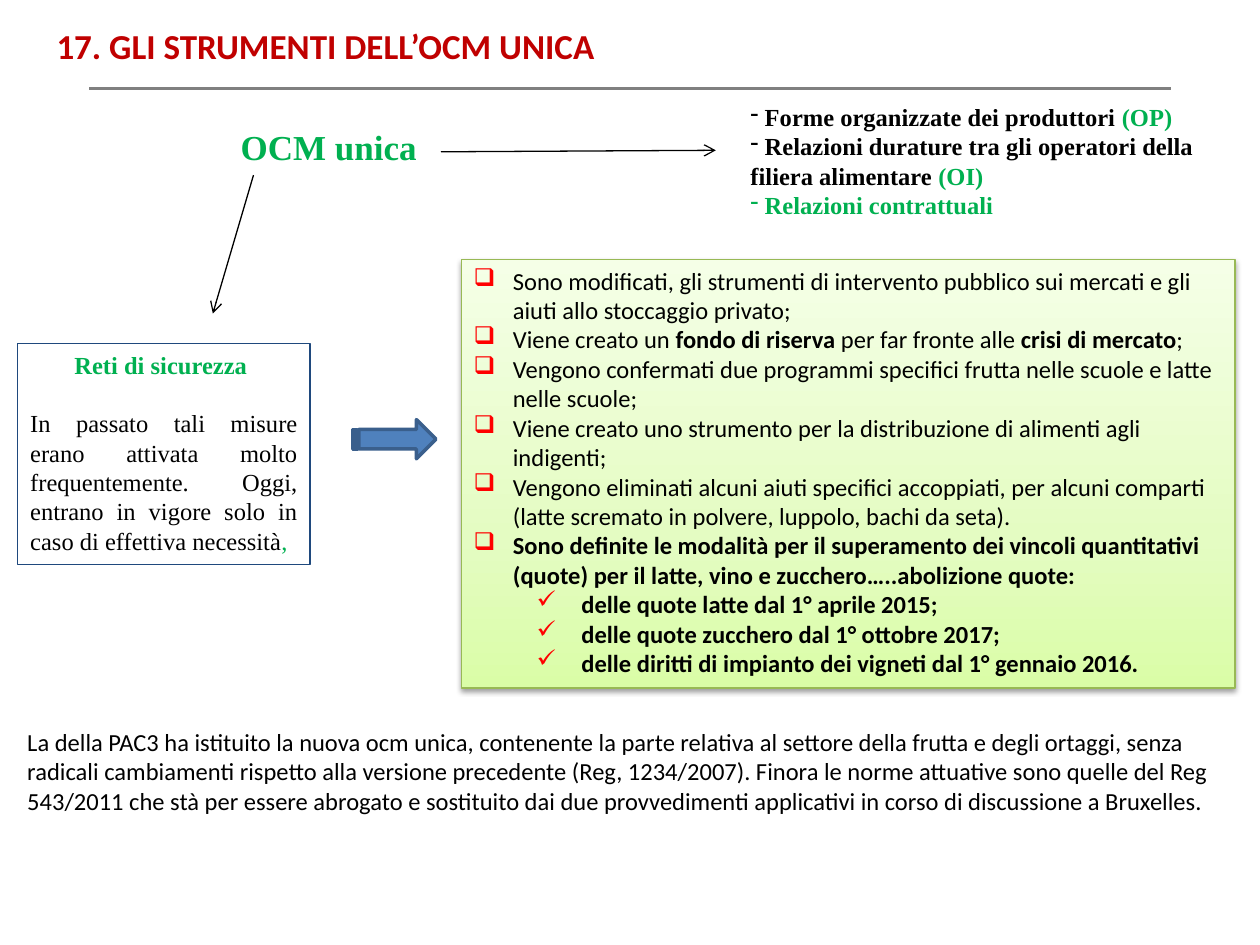
from copy import deepcopy
from dataclasses import dataclass

from lxml.etree import SubElement
from pptx import Presentation
from pptx.dml.color import RGBColor as RGB
from pptx.enum.shapes import MSO_CONNECTOR as Link, MSO_SHAPE as Kind
from pptx.enum.text import MSO_ANCHOR as Anchor, PP_ALIGN as Align
from pptx.oxml.ns import qn
from pptx.util import Cm, Pt


@dataclass(frozen=True)
class Theme:
    sans: str = "Calibri"
    serif: str = "Times New Roman"
    big: int = 20
    body: int = 14
    black: str = "000000"
    green: str = "00B050"
    title: str = "C00000"
    mark: str = "FF0000"
    rule: str = "808080"
    navy: str = "1F497D"
    blue: str = "4F81BD"
    edge: str = "3A5F8C"
    lime: str = "98B955"
    fade: tuple = ((0, "DAFDA7"), (0.35, "E4FCC2"), (1, "F5FFE7"))


T = Theme()
BOLD = {"bold": True}
GREEN = {"color": T.green}
BOX = {"bullet": "❑", "left": 0.79, "hang": 0.79, "mark": T.mark}
TICK = {"bullet": "✓", "left": 2.06, "hang": 0.79, "mark": T.mark, "level": 1}
DASH = {"bullet": "-"}

# A paragraph is (runs, paragraph format); a run is text or (text, font format).
TITLE = [(["17. GLI STRUMENTI DELL’OCM UNICA"], {})]
HUB = [(["OCM unica"], {})]
FORMS = [
    ([" Forme organizzate dei produttori ", ("(OP)", GREEN)], DASH),
    ([" Relazioni durature tra gli operatori della filiera alimentare ",
      ("(OI)", GREEN)], DASH),
    ([(" Relazioni contrattuali", GREEN)], DASH),
]
SAFETY = [
    ([("Reti di sicurezza ", GREEN | BOLD)], {"align": Align.CENTER}),
    (["In passato tali misure erano attivata molto frequentemente. Oggi, "
      "entrano in vigore solo in caso di effettiva necessità", (", ", GREEN)],
     {"align": Align.JUSTIFY, "before": 16.5}),
]
TOOLS = [(runs, BOX) for runs in (
    ["Sono modificati, gli strumenti di intervento pubblico sui mercati e gli "
     "aiuti allo stoccaggio privato;"],
    ["Viene creato un ", ("fondo di riserva ", BOLD), "per far fronte alle ",
     ("crisi di mercato", BOLD), ";"],
    ["Vengono confermati due programmi specifici frutta nelle scuole e latte "
     "nelle scuole;"],
    ["Viene creato uno strumento per la distribuzione di alimenti agli "
     "indigenti;"],
    ["Vengono eliminati alcuni aiuti specifici accoppiati, per alcuni comparti "
     "(latte scremato in polvere, luppolo, bachi da seta)."],
    [("Sono definite le modalità per il superamento dei vincoli quantitativi "
      "(quote) per il latte, vino e zucchero…..abolizione quote:", BOLD)],
)] + [([(text, BOLD)], TICK) for text in (
    " delle quote latte dal 1° aprile 2015;",
    " delle quote zucchero dal 1° ottobre 2017;",
    " delle diritti di impianto dei vigneti dal 1° gennaio 2016.",
)]
NOTE = [([
    "La della PAC3 ha istituito la nuova ocm unica, contenente la parte relativa "
    "al settore della frutta e degli ortaggi, senza radicali cambiamenti rispetto "
    "alla versione precedente (Reg, 1234/2007). Finora le norme attuative sono "
    "quelle del Reg 543/2011 che stà per essere abrogato e sostituito dai due "
    "provvedimenti applicativi in corso di discussione a Bruxelles."], {})]

# Left, top, width, height in cm
TEXTS = [
    (TITLE, (0.89, 0.36, 24, 1.12),
     {"size": T.big, "color": T.title, "bold": True}),
    (HUB, (4.6, 2.41, 5.99, 1.12),
     {"face": T.serif, "size": T.big, "color": T.green, "bold": True}),
    (FORMS, (14.88, 1.93, 10.01, 2.64), {"face": T.serif, "bold": True}),
    (NOTE, (0.3, 14.53, 24.61, 2.06), {}),
]
# Start, end in cm, colour, width in points, arrowhead
LINES = [
    ((1.8, 1.78), (23.6, 1.78), T.rule, 1.75, False),
    ((5.11, 3.53), (4.29, 6.32), T.black, 0.75, True),
    ((8.89, 3.06), (14.43, 3.03), T.black, 0.75, True),
]
SAFE_AT = (0.36, 6.93, 5.89, 4.45)
TOOLS_AT = (9.3, 5.23, 15.6, 8.64)
ARROW_AT = (7.11, 8.46, 1.68, 0.79)


def sub(node, tag, **attrs):
    return SubElement(node, qn(tag), {k: str(v) for k, v in attrs.items()})


def shape_par(par, align=None, before=None, bullet=None, left=0, hang=0,
              mark=None, level=0):
    """Set alignment, spacing, indent and bullet of a paragraph."""
    par.level = level
    if align is not None:
        par.alignment = align
    if before:
        par.space_before = Pt(before)
    if bullet:
        props = par._p.get_or_add_pPr()
        props.set("marL", str(Cm(left)))
        props.set("indent", str(-Cm(hang)))
        if mark:
            sub(sub(props, "a:buClr"), "a:srgbClr", val=mark)
        sub(props, "a:buChar", char=bullet)


def put(shape, paras, **base):
    """Write paragraphs; base is the font format that runs may override."""
    frame = shape.text_frame
    frame.word_wrap = True
    frame.vertical_anchor = Anchor.TOP
    for i, (runs, form) in enumerate(paras):
        par = frame.add_paragraph() if i else frame.paragraphs[0]
        shape_par(par, **({"align": Align.LEFT} | form))
        for item in runs:
            text, extra = (item, {}) if isinstance(item, str) else item
            look = {"face": T.sans, "size": T.body, "color": T.black,
                    "bold": False} | base | extra
            run = par.add_run()
            run.text = text
            font = run.font
            font.name, font.size = look["face"], Pt(look["size"])
            font.bold = look["bold"]
            font.color.rgb = RGB.from_string(look["color"])


def ink(line, color, width):
    line.color.rgb = RGB.from_string(color)
    line.width = Pt(width)


def add_box(slide, kind, at, edge, width, fill=None):
    box = slide.shapes.add_shape(kind, *map(Cm, at))
    box.shadow.inherit = False
    ink(box.line, edge, width)
    if fill:
        box.fill.solid()
        box.fill.fore_color.rgb = RGB.from_string(fill)
    else:
        box.fill.background()
    return box


def add_line(slide, start, end, color, width, head):
    line = slide.shapes.add_connector(Link.STRAIGHT, *map(Cm, start + end))
    ink(line.line, color, width)
    props = line._element.spPr
    if head:
        sub(props.find(qn("a:ln")), "a:tailEnd", type="arrow")
    sub(props, "a:effectLst")


def add_fade(box):
    """Fill from the bottom up and cast a soft shadow below."""
    box.fill.gradient()
    box.fill.gradient_angle = 90
    props = box._element.spPr
    stops = props.find(".//" + qn("a:gsLst"))
    stops.append(deepcopy(stops[0]))
    for stop, (pos, color) in zip(box.fill.gradient_stops, T.fade):
        stop.position = pos
        stop.color.rgb = RGB.from_string(color)
    cast = sub(props.find(qn("a:effectLst")), "a:outerShdw", blurRad=Pt(3.1),
               dist=Pt(1.6), dir=5400000, rotWithShape=0)
    sub(sub(cast, "a:srgbClr", val=T.black), "a:alpha", val=38000)


def main():
    deck = Presentation()
    deck.slide_width, deck.slide_height = Cm(25.4), Cm(19.05)
    slide = deck.slides.add_slide(deck.slide_layouts[6])
    for line in LINES:
        add_line(slide, *line)
    for paras, at, look in TEXTS:
        put(slide.shapes.add_textbox(*map(Cm, at)), paras, **look)
    safe = add_box(slide, Kind.RECTANGLE, SAFE_AT, T.navy, 0.75)
    put(safe, SAFETY, face=T.serif)
    tools = add_box(slide, Kind.RECTANGLE, TOOLS_AT, T.lime, 0.75)
    add_fade(tools)
    put(tools, TOOLS)
    add_box(slide, Kind.STRIPED_RIGHT_ARROW, ARROW_AT, T.edge, 2, T.blue)
    deck.save("out.pptx")


if __name__ == "__main__":
    main()
